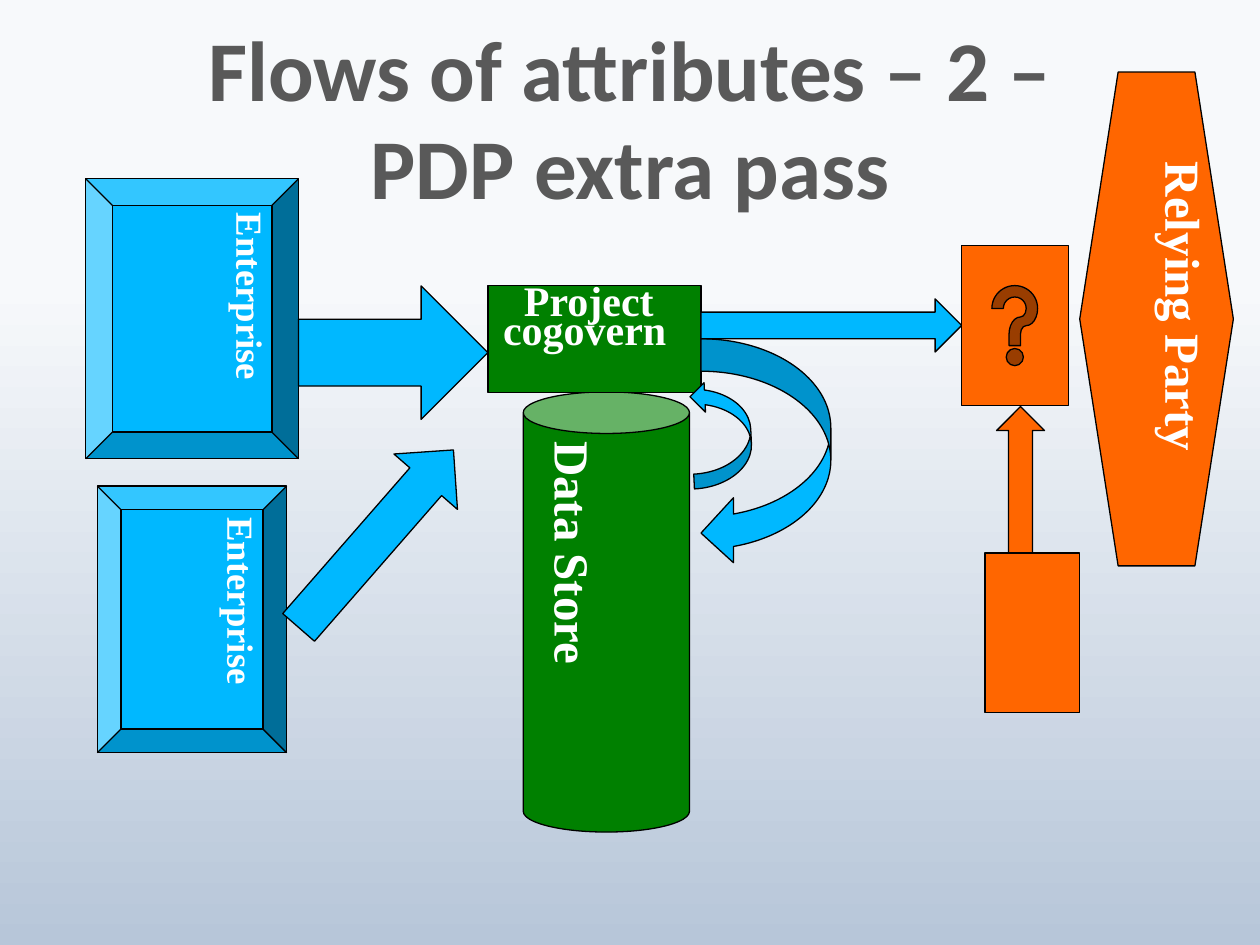
from dataclasses import dataclass

from pptx import Presentation
from pptx.dml.color import RGBColor
from pptx.enum.shapes import MSO_SHAPE
from pptx.enum.text import MSO_ANCHOR, PP_ALIGN
from pptx.util import Pt

BEVEL = MSO_SHAPE.BEVEL
CAN = MSO_SHAPE.CAN
RECTANGLE = MSO_SHAPE.RECTANGLE
HEXAGON = MSO_SHAPE.HEXAGON
HELP_BUTTON = MSO_SHAPE.ACTION_BUTTON_HELP
RIGHT_ARROW = MSO_SHAPE.RIGHT_ARROW
CURVED_LEFT_ARROW = MSO_SHAPE.CURVED_LEFT_ARROW
CURVED_RIGHT_ARROW = MSO_SHAPE.CURVED_RIGHT_ARROW
TOP, MIDDLE = MSO_ANCHOR.TOP, MSO_ANCHOR.MIDDLE
LEFT, CENTER = PP_ALIGN.LEFT, PP_ALIGN.CENTER


@dataclass(frozen=True)
class Theme:
    sky: str = "F7F9FB"
    dusk: str = "B7C6D9"
    heading: str = "595959"
    label: str = "FFFFFF"
    outline: str = "000000"
    enterprise: str = "00B8FF"
    project: str = "008000"
    relying: str = "FF6600"
    heading_font: str = "Calibri"
    label_font: str = "Times New Roman"
    heading_size: float = 48.6
    large_size: float = 28
    project_size: float = 24
    enterprise_size: float = 21
    label_spacing: float = 0.58
    outline_width: float = 0.75


THEME = Theme()


def rgb(value):
    return RGBColor.from_string(value)


def paint_background(slide):
    fill = slide.background.fill
    fill.gradient()
    fill.gradient_angle = 270
    stops = ((0.3, THEME.sky), (1, THEME.dusk))
    for stop, (position, color) in zip(fill.gradient_stops, stops):
        stop.position = position
        stop.color.rgb = rgb(color)


def write_text(holder, text, size, font=THEME.label_font, color=THEME.label,
               align=LEFT, anchor=TOP, spacing=THEME.label_spacing,
               vertical=False, right_inset=8.64, first_indent=0):
    frame = holder.text_frame
    frame.word_wrap = True
    frame.vertical_anchor = anchor
    frame.margin_left, frame.margin_right = Pt(8.64), Pt(right_inset)
    frame.margin_top = frame.margin_bottom = Pt(4.32)
    if vertical:
        frame._txBody.bodyPr.set("vert", "eaVert")
    for index, line in enumerate(text.split("\n")):
        paragraph = frame.add_paragraph() if index else frame.paragraphs[0]
        paragraph.alignment = align
        paragraph.line_spacing = spacing
        if first_indent and index == 0:
            paragraph._p.get_or_add_pPr().set("marL", str(Pt(first_indent)))
        run = paragraph.add_run()
        run.text = line
        run.font.name = font
        run.font.size = Pt(size)
        run.font.bold = True
        run.font.color.rgb = rgb(color)


def add_title(slide, text):
    title = slide.shapes.add_textbox(Pt(72), Pt(18), Pt(576), Pt(99.36))
    write_text(title, text, THEME.heading_size, font=THEME.heading_font,
               color=THEME.heading, align=CENTER, anchor=MIDDLE, spacing=Pt(56))


def add_block(slide, kind, color, left, top, width, height, rotation=0):
    block = slide.shapes.add_shape(kind, Pt(left), Pt(top), Pt(width), Pt(height))
    block.rotation = rotation
    block.shadow.inherit = False
    block.fill.solid()
    block.fill.fore_color.rgb = rgb(color)
    block.line.color.rgb = rgb(THEME.outline)
    block.line.width = Pt(THEME.outline_width)
    return block


def add_enterprise(slide, *box):
    enterprise = add_block(slide, BEVEL, THEME.enterprise, *box)
    write_text(enterprise, "Enterprise", THEME.enterprise_size, vertical=True)


def add_project(slide):
    store = add_block(slide, CAN, THEME.project, 299, 224, 95, 251.5)
    write_text(store, "Data Store", THEME.large_size, vertical=True, right_inset=61.5)
    project = add_block(slide, RECTANGLE, THEME.project, 278.8, 163.2, 121.8, 61)
    write_text(project, "Project\ncogovern", THEME.project_size, first_indent=12)


def add_relying_party(slide):
    party = add_block(slide, HEXAGON, THEME.relying, 617, 41.2, 87.8, 282.2)
    write_text(party, "Relying Party", THEME.large_size, vertical=True)


def main():
    deck = Presentation()
    deck.slide_width, deck.slide_height = Pt(720), Pt(540)
    slide = deck.slides.add_slide(deck.slide_layouts[6])
    paint_background(slide)
    add_title(slide, "Flows of attributes – 2 – PDP extra pass")
    add_enterprise(slide, 49, 102.2, 121.6, 160)
    add_project(slide)
    add_block(slide, CURVED_LEFT_ARROW, THEME.enterprise, 400.6, 193.6, 74.2, 129.6)
    add_block(slide, RIGHT_ARROW, THEME.enterprise, 170.6, 163.4, 108.2, 76.3)
    add_relying_party(slide)
    add_block(slide, RIGHT_ARROW, THEME.enterprise, 400.6, 170.8, 149, 30.4)
    add_block(slide, HELP_BUTTON, THEME.relying, 549.4, 140.4, 61, 91.4)
    add_enterprise(slide, 55.6, 277.8, 108.2, 152.4)
    add_block(slide, RIGHT_ARROW, THEME.enterprise, 147.6, 283.7, 134.6, 48.2, 311.1)
    add_block(slide, RECTANGLE, THEME.relying, 562.8, 316, 54, 91.4)
    add_block(slide, RIGHT_ARROW, THEME.relying, 541.4, 260.4, 83.5, 27.4, 270)
    add_block(slide, CURVED_RIGHT_ARROW, THEME.enterprise, 395.3, 217.4, 33.8, 61.2, 177.2)
    deck.save("out.pptx")


if __name__ == "__main__":
    main()
